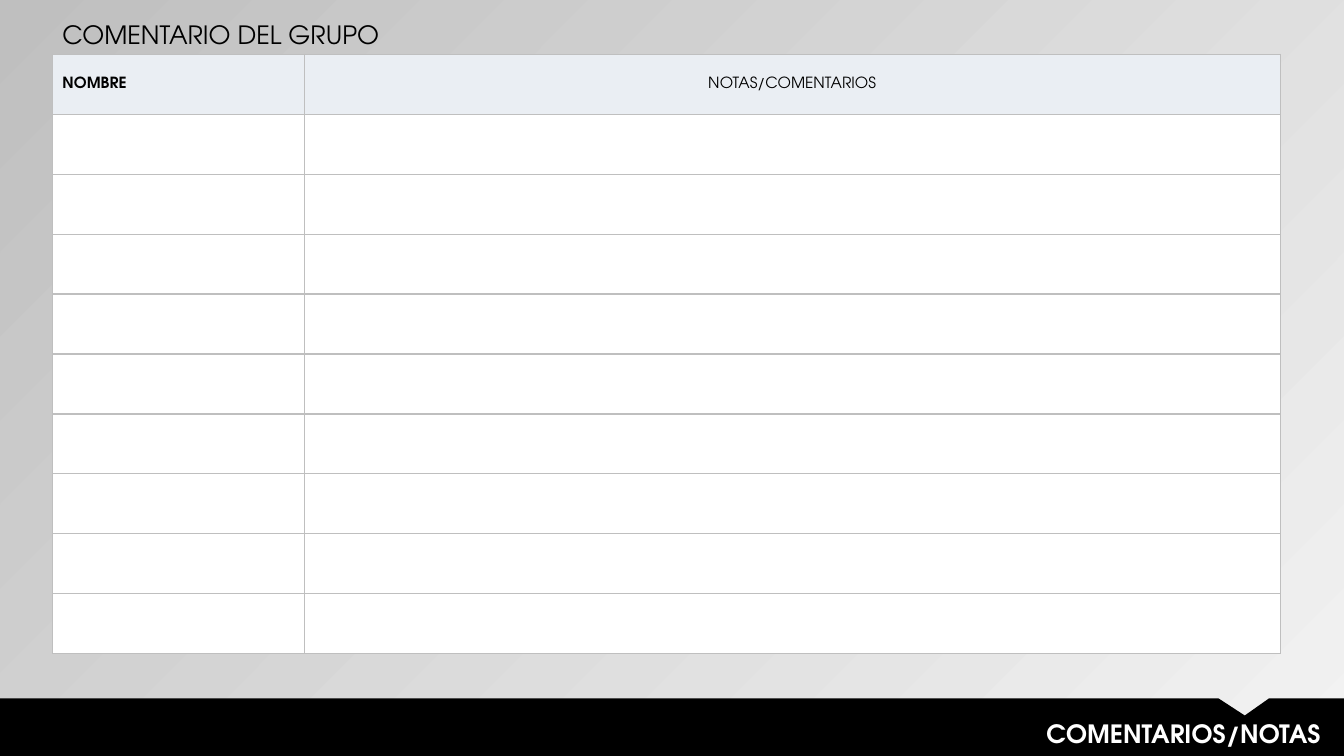
from dataclasses import dataclass

from lxml.etree import SubElement
from pptx import Presentation
from pptx.dml.color import RGBColor
from pptx.enum.text import MSO_ANCHOR, MSO_AUTO_SIZE, PP_ALIGN
from pptx.oxml.ns import qn
from pptx.util import Cm, Pt


@dataclass(frozen=True)
class Theme:
    font: str = "TeX Gyre Adventor"
    heading_size: int = 18
    table_size: int = 11
    border_width: int = 1
    black: str = "000000"
    white: str = "FFFFFF"
    header_fill: str = "EAEEF3"
    border: str = "BFBFBF"
    background_light: str = "F2F2F2"
    background_dark: str = "BFBFBF"


@dataclass(frozen=True)
class TextStyle:
    size: int
    color: str
    bold: bool = False
    align: PP_ALIGN = PP_ALIGN.LEFT


@dataclass(frozen=True)
class Heading:
    text: str
    left: float
    top: float
    width: float
    height: float
    style: TextStyle


@dataclass(frozen=True)
class Column:
    label: str
    width: float
    style: TextStyle


THEME = Theme()
SLIDE_WIDTH, SLIDE_HEIGHT = 33.87, 19.05
TABLE_LEFT, TABLE_TOP = 1.32, 1.37
ROW_COUNT, ROW_HEIGHT = 10, 1.51
BANNER_TOP = 17.6
BANNER_OUTLINE = (
    (0, BANNER_TOP),
    (30.71, BANNER_TOP),
    (31.37, 18.03),
    (31.98, BANNER_TOP),
    (SLIDE_WIDTH, BANNER_TOP),
    (SLIDE_WIDTH, SLIDE_HEIGHT),
    (0, SLIDE_HEIGHT),
)
TITLE = Heading("COMENTARIO DEL GRUPO", TABLE_LEFT, 0.36, 11.28, 1.02,
                TextStyle(THEME.heading_size, THEME.black))
FOOTER = Heading("COMENTARIOS/NOTAS", 10.52, 17.98, 23.01, 1.02,
                 TextStyle(THEME.heading_size, THEME.white, True, PP_ALIGN.RIGHT))
COLUMNS = (
    Column("NOMBRE", 6.35, TextStyle(THEME.table_size, THEME.black, True)),
    Column("NOTAS/COMENTARIOS", 24.59,
           TextStyle(THEME.table_size, THEME.black, align=PP_ALIGN.CENTER)),
)


def color(value: str) -> RGBColor:
    return RGBColor.from_string(value)


def write_text(frame, text: str, style: TextStyle) -> None:
    frame.text = text
    para = frame.paragraphs[0]
    para.alignment = style.align
    para.font.name = THEME.font
    para.font.size = Pt(style.size)
    para.font.bold = style.bold
    para.font.color.rgb = color(style.color)


def place_heading(box, heading: Heading) -> None:
    box.left, box.top = Cm(heading.left), Cm(heading.top)
    box.width, box.height = Cm(heading.width), Cm(heading.height)
    frame = box.text_frame
    write_text(frame, heading.text, heading.style)
    frame.word_wrap = True
    frame.auto_size = MSO_AUTO_SIZE.SHAPE_TO_FIT_TEXT
    frame.vertical_anchor = MSO_ANCHOR.TOP


def paint_background(page) -> None:
    fill = page.background.fill
    fill.gradient()
    fill.gradient_angle = 135
    for stop, value in zip(fill.gradient_stops,
                           (THEME.background_light, THEME.background_dark)):
        stop.color.rgb = color(value)


def format_cell(cell, fill: str) -> None:
    properties = cell._tc.get_or_add_tcPr()
    for side in ("a:lnL", "a:lnR", "a:lnT", "a:lnB"):
        line = SubElement(properties, qn(side), w=str(Pt(THEME.border_width)))
        SubElement(SubElement(line, qn("a:solidFill")), qn("a:srgbClr"), val=THEME.border)
    cell.fill.solid()
    cell.fill.fore_color.rgb = color(fill)


def add_comment_table(page) -> None:
    width = sum(column.width for column in COLUMNS)
    table = page.shapes.add_table(
        ROW_COUNT, len(COLUMNS), Cm(TABLE_LEFT), Cm(TABLE_TOP),
        Cm(width), Cm(ROW_COUNT * ROW_HEIGHT)).table
    table.first_row = False
    table.horz_banding = False
    for row in table.rows:
        row.height = Cm(ROW_HEIGHT)
    for index, column in enumerate(COLUMNS):
        table.columns[index].width = Cm(column.width)
        for row in range(ROW_COUNT):
            format_cell(table.cell(row, index), THEME.white if row else THEME.header_fill)
        header = table.cell(0, index)
        header.margin_top = header.margin_bottom = 0
        header.vertical_anchor = MSO_ANCHOR.MIDDLE
        write_text(header.text_frame, column.label, column.style)


def add_banner(page) -> None:
    start, *corners = [(Cm(x), Cm(y)) for x, y in BANNER_OUTLINE]
    builder = page.shapes.build_freeform(*start)
    builder.add_line_segments(corners, close=True)
    banner = builder.convert_to_shape()
    banner.shadow.inherit = False
    banner.fill.solid()
    banner.fill.fore_color.rgb = color(THEME.black)
    banner.line.fill.background()


def main() -> None:
    deck = Presentation()
    deck.slide_width, deck.slide_height = Cm(SLIDE_WIDTH), Cm(SLIDE_HEIGHT)
    page = deck.slides.add_slide(deck.slide_layouts[5])
    paint_background(page)
    place_heading(page.shapes.title, TITLE)
    add_comment_table(page)
    add_banner(page)
    place_heading(page.shapes.add_textbox(0, 0, 0, 0), FOOTER)
    deck.save("out.pptx")


if __name__ == "__main__":
    main()
